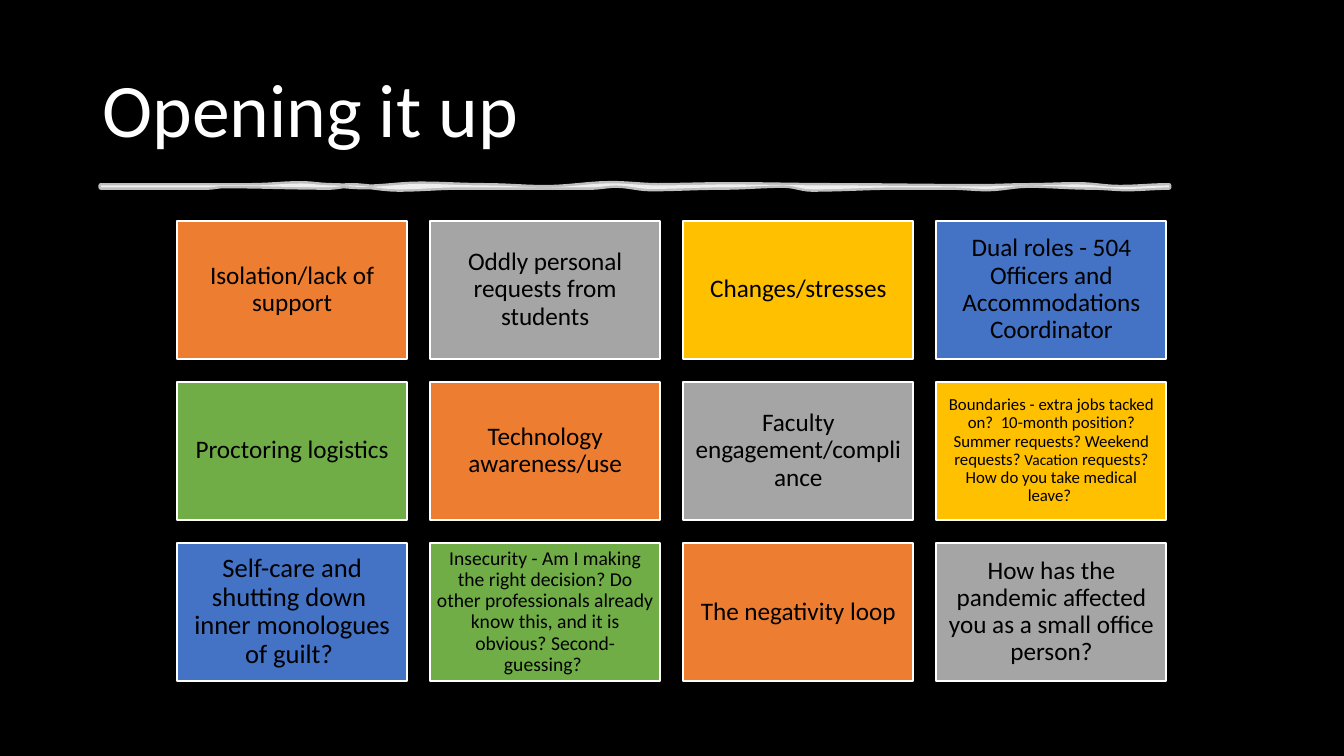
from math import cos, pi
from lxml import etree
from pptx import Presentation
from pptx.dml.color import RGBColor
from pptx.enum.shapes import MSO_SHAPE
from pptx.enum.text import MSO_ANCHOR, PP_ALIGN
from pptx.oxml.ns import qn
from pptx.util import Pt


def color(hex_string):
    return RGBColor.from_string(hex_string)


def wave(knots, steps=6):
    """Join the knots with smooth half-cosine curves."""
    points = []
    for (x1, y1), (x2, y2) in zip(knots, knots[1:]):
        for step in range(steps):
            t = step / steps
            points.append((x1 + (x2 - x1) * t, y1 + (y2 - y1) * (1 - cos(pi * t)) / 2))
    return points + [knots[-1]]


presentation = Presentation()
presentation.slide_width, presentation.slide_height = Pt(960), Pt(540)
slide = presentation.slides.add_slide(presentation.slide_layouts[6])
slide.background.fill.solid()
slide.background.fill.fore_color.rgb = color("000000")

# Title
title = slide.shapes.add_textbox(Pt(66), Pt(28.8), Pt(828), Pt(104.4))
title.text_frame.word_wrap = True
title.text_frame.vertical_anchor = MSO_ANCHOR.MIDDLE
title.text_frame.text = "Opening it up"
paragraph = title.text_frame.paragraphs[0]
paragraph.line_spacing = 0.9
font = paragraph.runs[0].font
font.name, font.size, font.color.rgb = "Calibri", Pt(54), color("FFFFFF")

# Brush stroke under the title
upper_edge = [(72, 132.5), (180, 132.5), (215, 131.1), (237, 132.5), (260, 133.6),
              (300, 131.4), (346, 132.5), (390, 133.9), (437, 131), (470, 132.5),
              (520, 131.8), (594, 132.5), (700, 133.2), (735, 132.5), (770, 131.8),
              (800, 133.8), (835, 132.5)]
lower_edge = [(835, 133.9), (805, 135), (780, 133.9), (735, 132.5), (705, 135),
              (679, 133.9), (640, 133.9), (580, 135.3), (560, 132.5), (516, 133.9),
              (465, 135), (440, 132.5), (422, 133.9), (328, 133.9), (285, 135.3),
              (250, 132.5), (235, 133.9), (160, 132.8), (148, 133.9), (72, 133.9)]
outline = [(Pt(x), Pt(y)) for x, y in wave(upper_edge) + wave(lower_edge)]
builder = slide.shapes.build_freeform(*outline[0])
builder.add_line_segments(outline[1:], close=True)
stroke = builder.convert_to_shape()
stroke.shadow.inherit = False
stroke.fill.solid()
stroke.fill.fore_color.rgb = color("FFFFFF")
stroke.line.color.rgb = color("FFFFFF")
stroke.line.width = Pt(3.5)
etree.SubElement(stroke.line._get_or_add_ln(), qn("a:round"))
for solid_color in stroke.element.spPr.iter(qn("a:srgbClr")):
    etree.SubElement(solid_color, qn("a:alpha"), val="75000")

# Topic tiles: inset, then runs of text with their sizes
tiles = [
    (5, [("Isolation/lack of support", 18)]),
    (5, [("Oddly personal requests from students", 18)]),
    (5, [("Changes/stresses", 18)]),
    (5, [("Dual roles - 504 Officers and Accommodations Coordinator", 18)]),
    (5, [("Proctoring logistics", 18)]),
    (5, [("Technology awareness/use", 18)]),
    (5, [("Faculty engagement/compliance", 18)]),
    (3.6, [("Boundaries - extra jobs tacked on?  10-month position? "
            "Summer requests? Weekend requests? ", 12),
           ("Vacation", 11),
           (" requests? How do you take medical leave?\u00a0", 12)]),
    (5.7, [("Self-care and shutting down  inner monologues of guilt?\u00a0", 19)]),
    (4.2, [("Insecurity - Am I making the right decision? Do other professionals "
            "already know this, and it is obvious? Second-guessing?\u00a0", 14)]),
    (5, [("The negativity loop", 18)]),
    (5, [("How has the pandemic affected you as a small office person?", 18)]),
]
tile_colors = ["ED7D31", "A5A5A5", "FFC000", "4472C4", "70AD47"]
columns = 4
for index, (inset, runs) in enumerate(tiles):
    row, column = divmod(index, columns)
    tile = slide.shapes.add_shape(
        MSO_SHAPE.RECTANGLE, Pt(126.5 + 180.8 * column), Pt(157.6 + 115.1 * row),
        Pt(164.3), Pt(98.6))
    tile.shadow.inherit = False
    tile.fill.solid()
    tile.fill.fore_color.rgb = color(tile_colors[index % len(tile_colors)])
    tile.line.color.rgb = color("FFFFFF")
    tile.line.width = Pt(1.5)

    frame = tile.text_frame
    frame.word_wrap = True
    frame.vertical_anchor = MSO_ANCHOR.MIDDLE
    frame.margin_left = frame.margin_right = Pt(inset)
    frame.margin_top = frame.margin_bottom = Pt(inset)
    paragraph = frame.paragraphs[0]
    paragraph.alignment = PP_ALIGN.CENTER
    paragraph.line_spacing = 0.9
    for text, size in runs:
        run = paragraph.add_run()
        run.text = text
        run.font.name, run.font.size = "Calibri", Pt(size)
        run.font.color.rgb = color("000000")

presentation.save("out.pptx")
